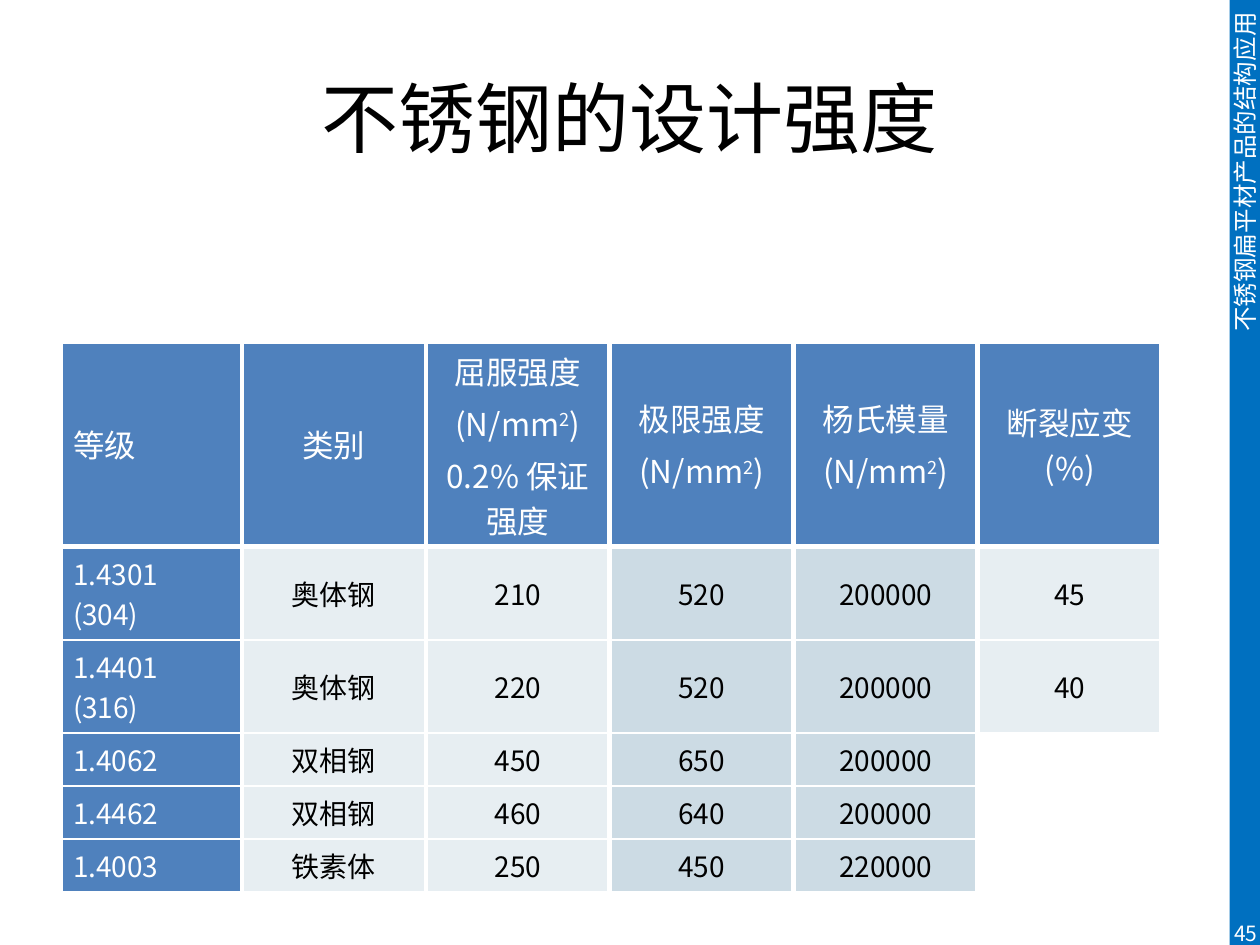
import pptx
import pptx.util
import pptx.dml.color
import pptx.enum.shapes
import pptx.enum.text
import pptx.oxml.ns
from lxml import etree
from pptx.util import Inches

FONT = "Noto Sans CJK SC"
WHITE, BLACK = "FFFFFF", "000000"
SIDEBAR, HEADER, PALE, MID = "0070C0", "4F81BD", "E7EEF2", "CCDBE4"
ALIGN = pptx.enum.text.PP_ALIGN
MIDDLE = pptx.enum.text.MSO_ANCHOR.MIDDLE

COLUMN_WIDTHS = [1.44] + [1.46] * 5
ROW_HEIGHTS = [1.63, 0.74, 0.74] + [0.42] * 3
COLUMN_FILLS = [HEADER, PALE, PALE, MID, MID, PALE]
UNIT = "(N/mm²)"
ROWS = [
    ["等级", "类别", f"屈服强度\n{UNIT}\n0.2% 保证强度", f"极限强度\n{UNIT}",
     f"杨氏模量\n{UNIT}", "断裂应变 (%)"],
    ["1.4301 (304)", "奥体钢", "210", "520", "200000", "45"],
    ["1.4401 (316)", "奥体钢", "220", "520", "200000", "40"],
    ["1.4062", "双相钢", "450", "650", "200000", ""],
    ["1.4462", "双相钢", "460", "640", "200000", ""],
    ["1.4003", "铁素体", "250", "450", "220000", ""],
]


def rgb(value):
    return pptx.dml.color.RGBColor.from_string(value)


def format_run(r, size, color):
    r.font.size = pptx.util.Pt(size)
    r.font.color.rgb = rgb(color)
    r.font.name = FONT
    ea = etree.SubElement(r.font._element, pptx.oxml.ns.qn("a:ea"))
    ea.set("typeface", FONT)


def write(tf, text, size, color, align):
    tf.text = text
    for p in tf.paragraphs:
        p.alignment = align
        if p.text == UNIT:
            p.text = ""
            for part in ("(N/mm", "2", ")"):
                p.add_run().text = part
            p.runs[1].font._element.set("baseline", "30000")
        for r in p.runs:
            format_run(r, size, color)


def add_text(slide, box, text, size, color, align):
    sp = slide.shapes.add_textbox(*map(Inches, box))
    tf = sp.text_frame
    tf.word_wrap = True
    tf.vertical_anchor = MIDDLE
    write(tf, text, size, color, align)


def add_sidebar(slide, text):
    sp = slide.shapes.add_shape(pptx.enum.shapes.MSO_SHAPE.RECTANGLE,
                                Inches(9.76), 0, Inches(0.24), Inches(7.5))
    sp.shadow.inherit = False
    sp.fill.solid()
    sp.fill.fore_color.rgb = rgb(SIDEBAR)
    sp.line.fill.background()
    tf = sp.text_frame
    tf.vertical_anchor = MIDDLE
    tf._txBody.bodyPr.set("vert", "vert270")
    write(tf, text, 14, WHITE, ALIGN.RIGHT)


def set_borders(cell, widths):
    """Draw white left, right, top and bottom borders, widths in points."""
    tc_pr = cell._tc.get_or_add_tcPr()
    for side, width in zip("LRTB", widths):
        tc_pr.append(pptx.oxml.parse_xml(
            f'<a:ln{side} {pptx.oxml.ns.nsdecls("a")} w="{pptx.util.Pt(width)}">'
            f'<a:solidFill><a:srgbClr val="{WHITE}"/></a:solidFill></a:ln{side}>'))


def fill_cell(cell, text, row, col):
    is_header = row == 0
    set_borders(cell, (3, 3, 3 if row < 2 else 1, 3 if is_header else 1))
    cell.fill.solid()
    fill = HEADER if is_header else COLUMN_FILLS[col]
    cell.fill.fore_color.rgb = rgb(fill if text else WHITE)
    cell.vertical_anchor = MIDDLE
    size = 18 if is_header else 16
    write(cell.text_frame, text, size, WHITE if fill == HEADER else BLACK,
          ALIGN.CENTER if col else ALIGN.LEFT)
    for p in cell.text_frame.paragraphs:
        p.space_before = pptx.util.Pt(size * 0.2)


def add_strength_table(slide):
    frame = slide.shapes.add_table(
        len(ROWS), len(COLUMN_WIDTHS), Inches(0.48), Inches(2.71),
        Inches(sum(COLUMN_WIDTHS)), Inches(sum(ROW_HEIGHTS)))
    table = frame.table
    table.horz_banding = False
    for column, width in zip(table.columns, COLUMN_WIDTHS):
        column.width = Inches(width)
    for row, height in zip(table.rows, ROW_HEIGHTS):
        row.height = Inches(height)
    for row, texts in enumerate(ROWS):
        for col, text in enumerate(texts):
            fill_cell(table.cell(row, col), text, row, col)
    for r in (r for c in table.iter_cells() for p in c.text_frame.paragraphs for r in p.runs):
        r.font.bold = False


def main():
    prs = pptx.Presentation()
    prs.slide_width, prs.slide_height = Inches(10), Inches(7.5)
    slide = prs.slides.add_slide(prs.slide_layouts[6])
    add_sidebar(slide, "不锈钢扁平材产品的结构应用")
    add_text(slide, (0.5, 0.3, 9, 1.25), "不锈钢的设计强度", 44, BLACK, ALIGN.CENTER)
    add_strength_table(slide)
    add_text(slide, (9.65, 7.21, 0.43, 0.4), "45", 12, WHITE, ALIGN.RIGHT)
    prs.save("out.pptx")


if __name__ == "__main__":
    main()
